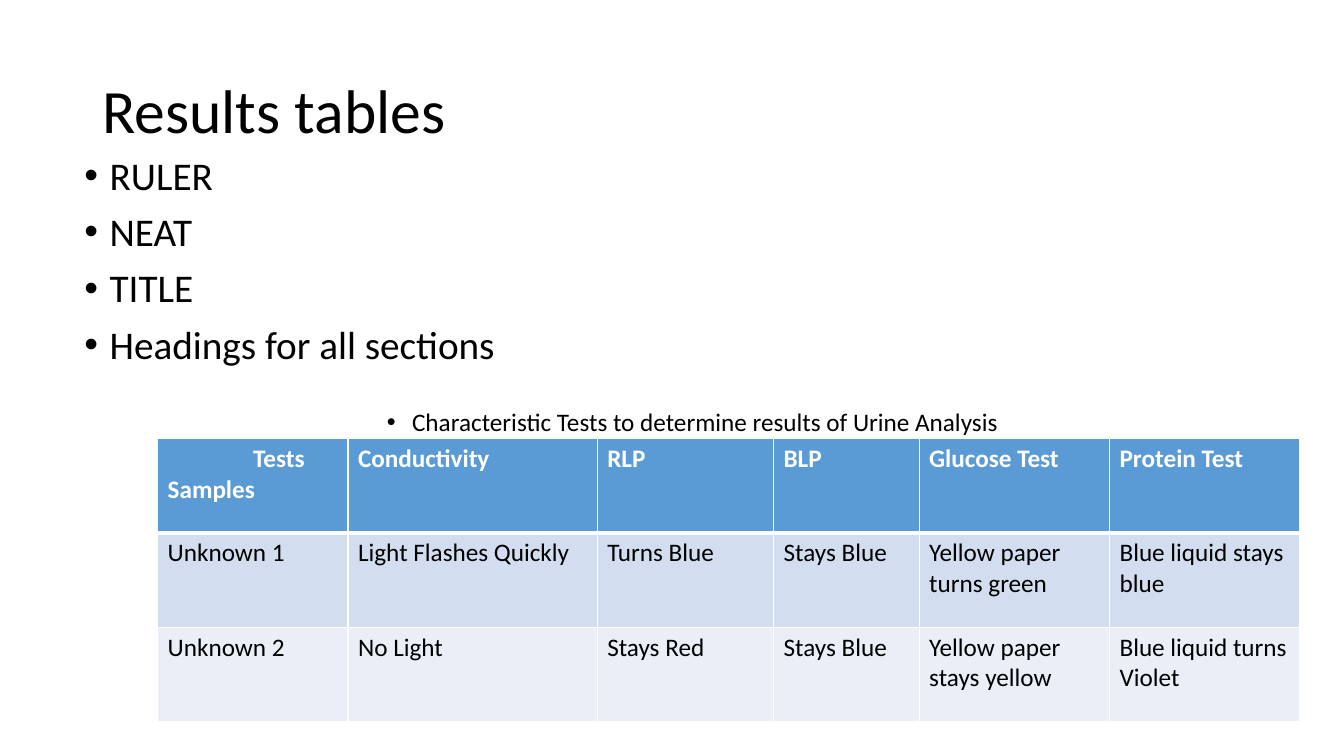
from lxml.etree import SubElement
from pptx import Presentation
from pptx.dml.color import RGBColor
from pptx.enum.text import MSO_ANCHOR, MSO_AUTO_SIZE, PP_ALIGN
from pptx.oxml.ns import qn
from pptx.util import Pt

BLACK = RGBColor(0x00, 0x00, 0x00)
WHITE = RGBColor(0xFF, 0xFF, 0xFF)
HEADER_BLUE = RGBColor(0x5B, 0x9B, 0xD5)
BAND_BLUE = RGBColor(0xD2, 0xDE, 0xEF)
BAND_PALE = RGBColor(0xEA, 0xEF, 0xF7)

CHECKLIST = ["RULER", "NEAT", "TITLE", "Headings for all sections"]
CAPTION = "Characteristic Tests to determine results of Urine Analysis"
COLUMN_WIDTHS = [136, 178, 126, 104, 136, 136]
ROW_HEIGHT = 67.4
TESTS_INDENT = 61
ROW_FILLS = [HEADER_BLUE, BAND_BLUE, BAND_PALE]
RESULTS = [
    ["Tests\nSamples", "Conductivity", "RLP", "BLP", "Glucose Test", "Protein Test"],
    ["Unknown 1", "Light Flashes Quickly", "Turns Blue", "Stays Blue",
     "Yellow paper turns green", "Blue liquid stays blue"],
    ["Unknown 2", "No Light", "Stays Red", "Stays Blue",
     "Yellow paper stays yellow", "Blue liquid turns Violet"],
]


def set_attributes(target, values):
    """Set each named attribute of the target."""
    for name, value in values.items():
        setattr(target, name, value)


def format_font(paragraph, size, color=BLACK, bold=False):
    """Give every run of a paragraph its font."""
    for run in paragraph.runs:
        set_attributes(run.font, {"name": "Calibri", "size": Pt(size), "bold": bold})
        run.font.color.rgb = color


def set_indent(paragraph, left, first_line=0):
    """Indent a paragraph and its first line."""
    properties = paragraph._p.get_or_add_pPr()
    properties.set("marL", str(Pt(left)))
    properties.set("indent", str(Pt(first_line)))
    return properties


def format_bullet(paragraph, text, size, left, space_before):
    """Fill a paragraph as a bulleted line."""
    paragraph.text = text
    set_attributes(paragraph, {"line_spacing": 0.9, "space_before": Pt(space_before)})
    properties = set_indent(paragraph, left, -18)
    SubElement(properties, qn("a:buFont"), typeface="Arial")
    SubElement(properties, qn("a:buChar"), char="•")
    format_font(paragraph, size)


def add_title(slide, text):
    """Place the slide title in its placeholder."""
    title = slide.shapes.title
    set_attributes(title, {"left": Pt(66), "top": Pt(28.8),
                           "width": Pt(828), "height": Pt(104.4)})
    set_attributes(title.text_frame, {"text": text, "word_wrap": True,
                                      "auto_size": MSO_AUTO_SIZE.NONE,
                                      "vertical_anchor": MSO_ANCHOR.MIDDLE})
    paragraph = title.text_frame.paragraphs[0]
    set_attributes(paragraph, {"alignment": PP_ALIGN.LEFT, "line_spacing": 0.9})
    format_font(paragraph, 44)


def add_checklist(slide):
    """Add the bulleted checklist and the table caption."""
    text_frame = slide.shapes.add_textbox(Pt(53.3), Pt(108), Pt(828), Pt(342.7)).text_frame
    text_frame.word_wrap = True
    paragraph = text_frame.paragraphs[0]
    for item in CHECKLIST:
        format_bullet(paragraph, item, 28, 18, 10)
        paragraph = text_frame.add_paragraph()
    format_bullet(paragraph, CAPTION, 18, 234, 30)


def add_borders(cell, widths):
    """Draw white borders with the given width for each side."""
    properties = cell._tc.get_or_add_tcPr()
    for side, width in widths.items():
        line = SubElement(properties, qn(f"a:ln{side}"), w=str(Pt(width)))
        fill = SubElement(line, qn("a:solidFill"))
        SubElement(fill, qn("a:srgbClr"), val=str(WHITE))


def add_results_table(slide):
    """Add the table of test results."""
    table = slide.shapes.add_table(
        len(RESULTS), len(COLUMN_WIDTHS), Pt(112.6), Pt(313.2),
        Pt(sum(COLUMN_WIDTHS)), Pt(ROW_HEIGHT * len(RESULTS))).table
    for column, width in zip(table.columns, COLUMN_WIDTHS):
        column.width = Pt(width)
    for row_index, (row, texts, fill) in enumerate(zip(table.rows, RESULTS, ROW_FILLS)):
        row.height = Pt(ROW_HEIGHT)
        is_header = row_index == 0
        widths = {"L": 1, "R": 1, "T": 3 if row_index == 1 else 1, "B": 3 if is_header else 1}
        for cell, text in zip(row.cells, texts):
            cell.text = text
            add_borders(cell, widths)
            cell.fill.solid()
            cell.fill.fore_color.rgb = fill
            for paragraph in cell.text_frame.paragraphs:
                format_font(paragraph, 18, WHITE if is_header else BLACK, is_header)
    set_indent(table.cell(0, 0).text_frame.paragraphs[0], TESTS_INDENT)


def main():
    """Build the results slide and save it."""
    presentation = Presentation()
    set_attributes(presentation, {"slide_width": Pt(960), "slide_height": Pt(540)})
    slide = presentation.slides.add_slide(presentation.slide_layouts[5])
    add_title(slide, "Results tables")
    add_checklist(slide)
    add_results_table(slide)
    presentation.save("out.pptx")


if __name__ == "__main__":
    main()
